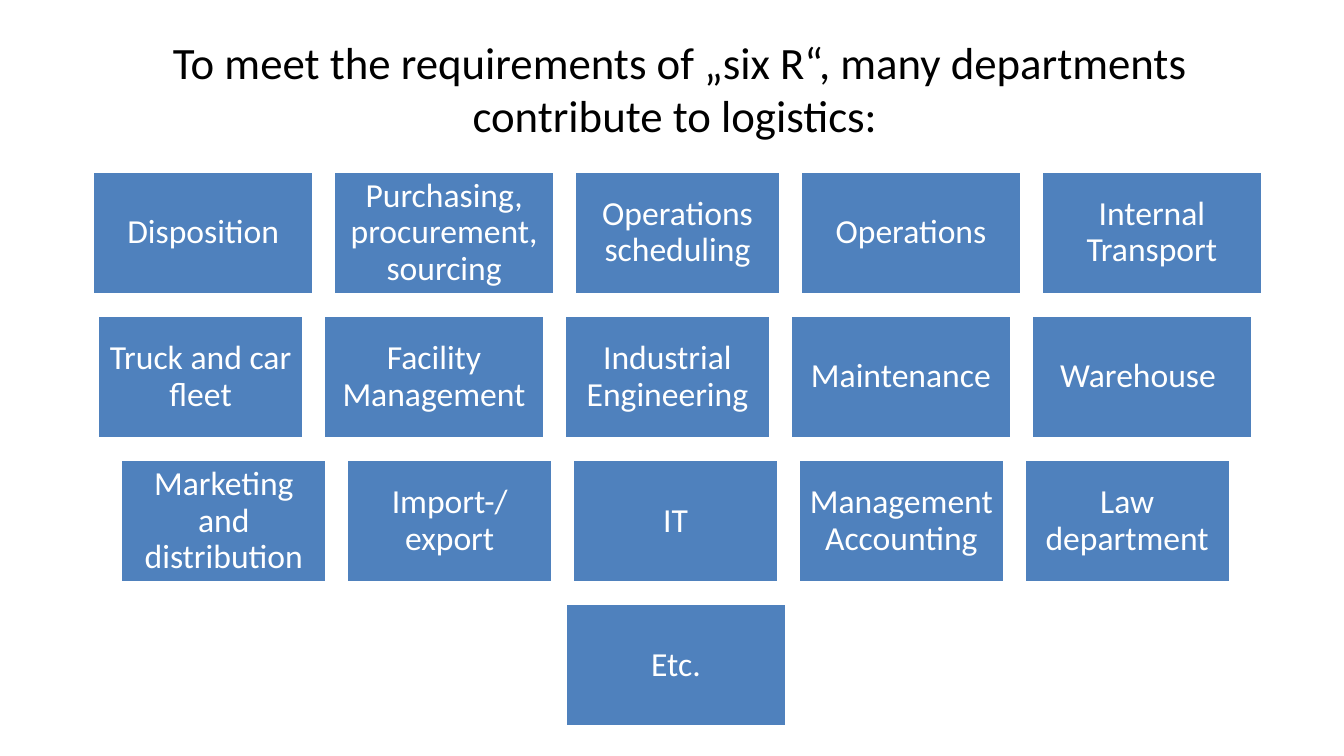
from pptx import Presentation
from pptx.dml.color import RGBColor
from pptx.enum.shapes import MSO_SHAPE
from pptx.enum.text import MSO_ANCHOR, MSO_AUTO_SIZE, PP_ALIGN
from pptx.util import Inches, Pt

COLORS = {"box": "4F81BD", "white": "FFFFFF", "black": "000000"}
NARROW, WIDE, HEIGHT = 2.04, 2.19, 1.22
GAP, TOP, ROW_STEP = 0.2, 1.7, 1.43

ROWS = [
    (0.92, [("Disposition", WIDE), ("Purchasing, procurement, sourcing", WIDE),
            ("Operations scheduling", NARROW), ("Operations", WIDE),
            ("Internal Transport", WIDE)]),
    (0.97, [("Truck and car fleet", NARROW), ("Facility Management", WIDE),
            ("Industrial Engineering", NARROW), ("Maintenance", WIDE),
            ("Warehouse ", WIDE)]),
    (1.2, [("Marketing and distribution", NARROW), ("Import-/ export", NARROW),
           ("IT", NARROW), ("Management Accounting", NARROW),
           ("Law department", NARROW)]),
    (5.61, [("Etc.", WIDE)]),
]


def write(sp, text, size, color, anchor, inset=0.1, spacing=1.0):
    tf = sp.text_frame
    tf.word_wrap = True
    tf.auto_size = MSO_AUTO_SIZE.NONE
    tf.vertical_anchor = anchor
    tf.margin_left = tf.margin_right = Inches(0.1)
    tf.margin_top = tf.margin_bottom = Inches(inset)
    p = tf.paragraphs[0]
    p.alignment = PP_ALIGN.CENTER
    p.line_spacing = spacing
    r = p.add_run()
    r.text = text
    r.font.name = "Calibri"
    r.font.size = Pt(size)
    r.font.color.rgb = RGBColor.from_string(COLORS[color])


prs = Presentation()
prs.slide_width, prs.slide_height = Inches(13.33), Inches(7.5)
s = prs.slides.add_slide(prs.slide_layouts[5])

title = s.shapes.title
title.left, title.top = Inches(1.31), Inches(0.29)
title.width, title.height = Inches(10.87), Inches(1.18)
write(title, "To meet the requirements of „six R“, many departments contribute to logistics: ",
      size=32, color="black", anchor=MSO_ANCHOR.TOP, inset=0.05)

for i, (left, departments) in enumerate(ROWS):
    for name, width in departments:
        sp = s.shapes.add_shape(MSO_SHAPE.RECTANGLE, Inches(left), Inches(TOP + i * ROW_STEP),
                                Inches(width), Inches(HEIGHT))
        sp.shadow.inherit = False
        sp.fill.solid()
        sp.fill.fore_color.rgb = RGBColor.from_string(COLORS["box"])
        sp.line.color.rgb = RGBColor.from_string(COLORS["white"])
        sp.line.width = Pt(2)
        write(sp, name, size=24, color="white", anchor=MSO_ANCHOR.MIDDLE, spacing=0.9)
        left += width + GAP

prs.save("out.pptx")
